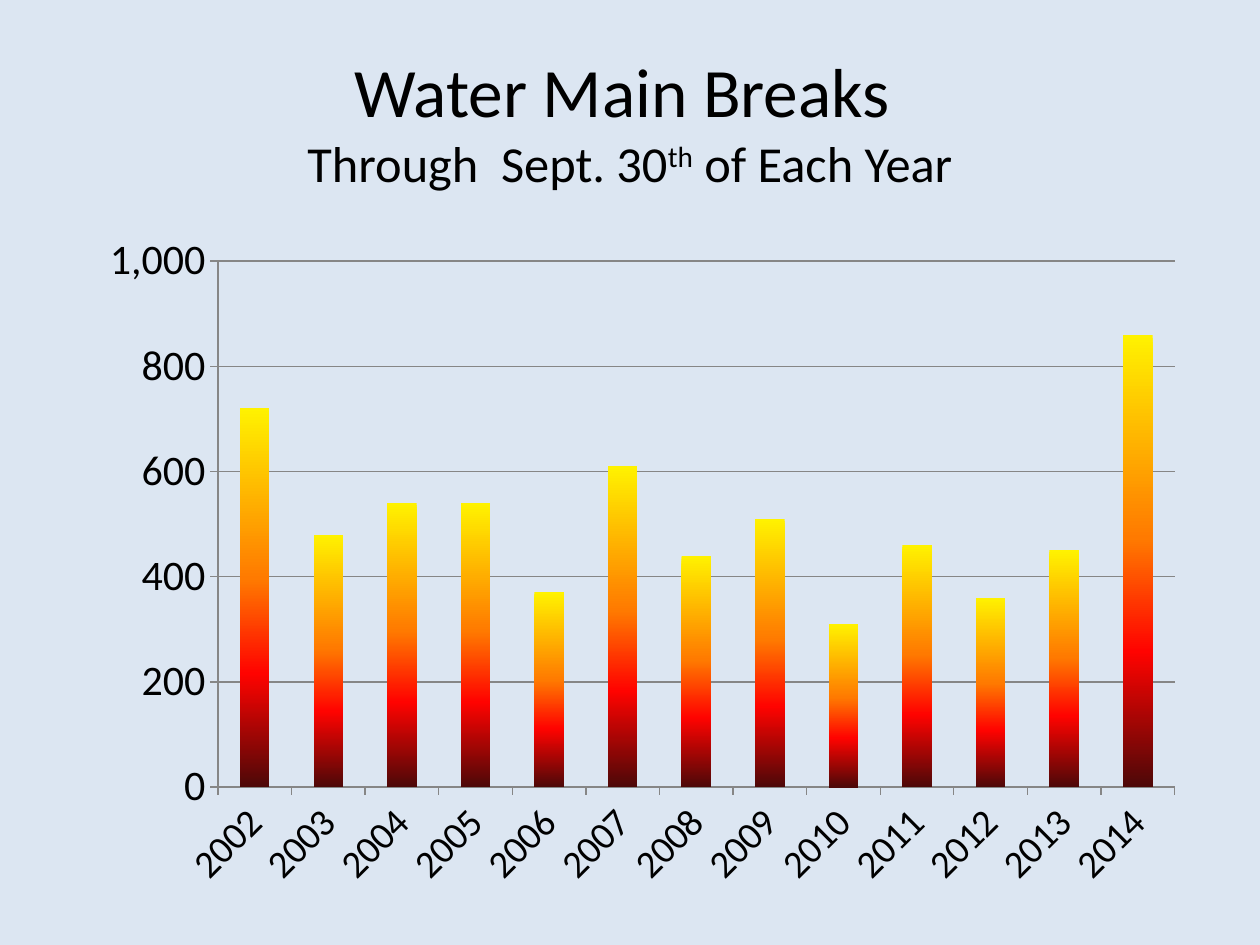
from dataclasses import dataclass

from pptx import Presentation
from pptx.chart.data import CategoryChartData
from pptx.dml.color import RGBColor
from pptx.enum.chart import XL_CHART_TYPE, XL_TICK_MARK
from pptx.enum.text import MSO_ANCHOR, PP_ALIGN
from pptx.oxml import parse_xml
from pptx.oxml.ns import nsdecls, qn
from pptx.util import Inches, Pt

COLUMN = XL_CHART_TYPE.COLUMN_CLUSTERED
OUT = XL_TICK_MARK.OUTSIDE
MIDDLE = MSO_ANCHOR.MIDDLE
CENTER = PP_ALIGN.CENTER


@dataclass(frozen=True)
class Theme:
    """Colours, type sizes and font of the slide."""
    font: str = "Calibri"
    ink: str = "000000"
    back: str = "DCE6F2"
    rule: str = "868686"
    fire: tuple = ((0, "FFF200"), (45, "FF7A00"), (70, "FF0300"), (100, "4D0808"))
    head: float = 39.6
    sub: float = 28.8
    value: int = 24
    year: int = 22


def style(font, theme, size):
    """Set the face, colour and size of a font."""
    font.name, font.size = theme.font, Pt(size)
    font.color.rgb = RGBColor.from_string(theme.ink)


def write(para, text, theme, size, base=0):
    """Add a run of text, raised by a percentage if asked."""
    run = para.add_run()
    run.text = text
    style(run.font, theme, size)
    if base:
        run.font._element.set("baseline", str(base * 1000))


class Page:
    """A slide with its style, placed by shares of the slide's size."""

    def __init__(self, deck, theme):
        """Add a blank slide with the theme's background."""
        self.theme = theme
        self.wide, self.high = deck.slide_width, deck.slide_height
        self.slide = deck.slides.add_slide(deck.slide_layouts[6])
        fill = self.slide.background.fill
        fill.solid()
        fill.fore_color.rgb = RGBColor.from_string(theme.back)

    def place(self, left, top, width, height):
        """Turn shares of the slide into lengths."""
        return (int(left * self.wide), int(top * self.high),
                int(width * self.wide), int(height * self.high))

    def title(self, box, head, parts):
        """Add a centred heading with a smaller second line."""
        frame = self.slide.shapes.add_textbox(*self.place(*box)).text_frame
        frame.word_wrap, frame.vertical_anchor = True, MIDDLE
        para = frame.paragraphs[0]
        para.alignment = CENTER
        write(para, head, self.theme, self.theme.head)
        para.add_line_break()
        for text, base in parts:
            write(para, text, self.theme, self.theme.sub, base=base)

    def axis(self, axis, size):
        """Style the labels, ticks and line of an axis."""
        axis.major_tick_mark = OUT
        style(axis.tick_labels.font, self.theme, size)
        self.line(axis.format.line)

    def line(self, line):
        """Give a chart line the rule colour."""
        line.color.rgb = RGBColor.from_string(self.theme.rule)
        line.width = Pt(0.75)

    def blend(self, series):
        """Fill a series from top to bottom with the fire colours."""
        fill = series.format.fill
        fill.gradient()
        fill.gradient_angle = 270
        stops = next(series._element.iter(qn("a:gsLst")))
        for stop in list(stops):
            stops.remove(stop)
        for share, color in self.theme.fire:
            stops.append(parse_xml(
                f'<a:gs {nsdecls("a")} pos="{share * 1000}">'
                f'<a:srgbClr val="{color}"/></a:gs>'))

    def frame(self, chart, **shares):
        """Fix the inner plot area by shares of the chart."""
        plot = chart._chartSpace.chart.plotArea
        for old in plot.findall(qn("c:layout")):
            plot.remove(old)
        sides = "".join(f'<c:{key} val="{val}"/>' for key, val in shares.items())
        plot.insert(0, parse_xml(
            f'<c:layout {nsdecls("c")}><c:manualLayout>'
            '<c:layoutTarget val="inner"/><c:xMode val="edge"/>'
            f'<c:yMode val="edge"/>{sides}</c:manualLayout></c:layout>'))

    def columns(self, box, years, counts):
        """Add the column chart of counts by year."""
        data = CategoryChartData(number_format="General")
        data.categories = [str(year) for year in years]
        data.add_series("Series 1", counts)
        chart = self.slide.shapes.add_chart(COLUMN, *self.place(*box), data).chart
        style(chart.font, self.theme, 10)
        chart.has_legend = chart.has_title = False
        plot = chart.plots[0]
        plot.gap_width, plot.vary_by_categories = 150, False
        self.blend(plot.series[0])
        value, year = chart.value_axis, chart.category_axis
        self.axis(value, self.theme.value)
        self.axis(year, self.theme.year)
        value.minimum_scale, value.maximum_scale, value.major_unit = 0, 1000, 200
        value.tick_labels.number_format = "#,##0"
        value.tick_labels.number_format_is_linked = False
        self.line(value.major_gridlines.format.line)
        next(year._element.iter(qn("a:bodyPr"))).set("rot", "-2700000")
        self.frame(chart, x=0.12, y=0.06, w=0.86, h=0.77)


def main():
    """Build and save the slide."""
    deck = Presentation()
    deck.slide_width, deck.slide_height = Inches(10), Inches(7.5)
    page = Page(deck, Theme())
    page.title((0.075, 0.044, 0.85, 0.167), "Water Main Breaks ",
               (("Through  Sept. 30", 0), ("th", 30), (" of Each Year", 0)))
    page.columns((0.067, 0.233, 0.883, 0.723), range(2002, 2015),
                 (720, 480, 540, 540, 370, 610, 440, 510, 310, 460, 360, 450, 860))
    deck.save("out.pptx")


if __name__ == "__main__":
    main()
